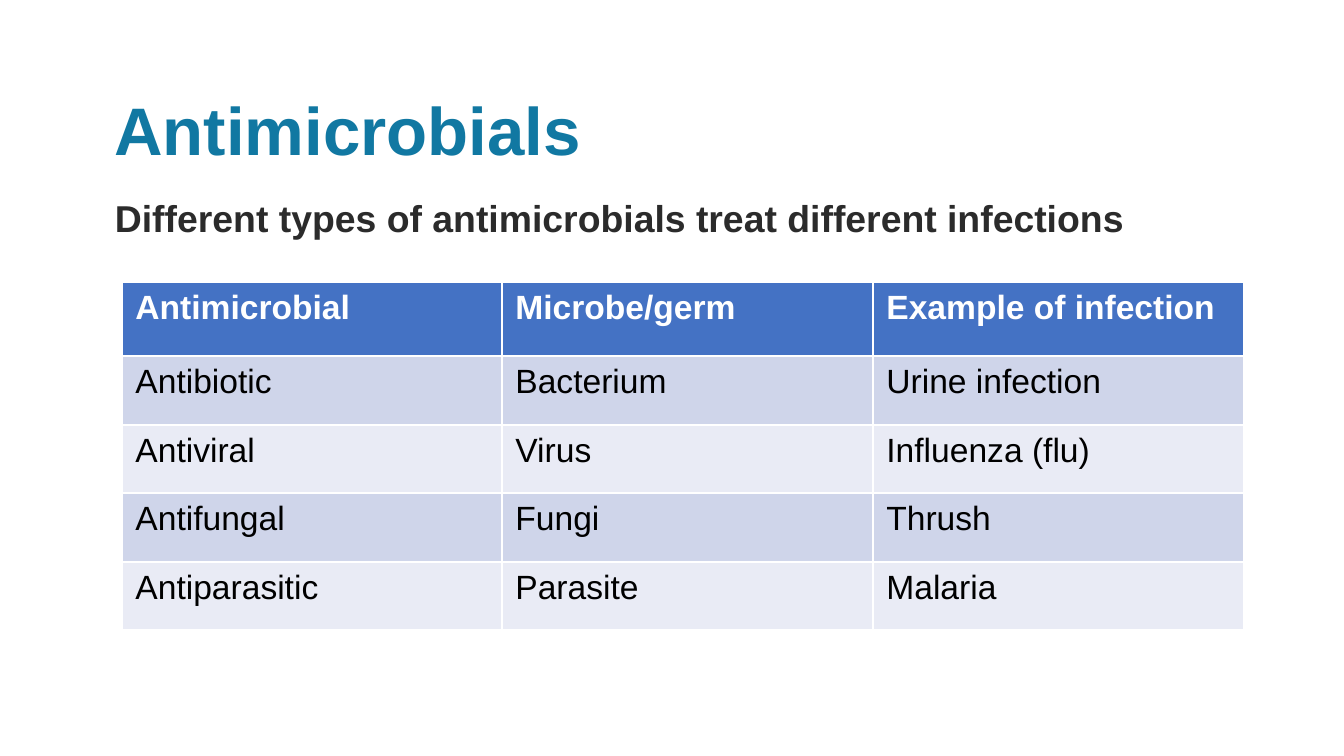
"""Build a slide that matches types of antimicrobials with microbes and infections."""
import pptx
import pptx.dml.color
import pptx.enum.text
import pptx.util

RGBColor = pptx.dml.color.RGBColor
TEAL = RGBColor(0x11, 0x78, 0xA2)
CHARCOAL = RGBColor(0x2B, 0x2B, 0x2B)
WHITE = RGBColor(0xFF, 0xFF, 0xFF)
BLACK = RGBColor(0x00, 0x00, 0x00)
BLUE = RGBColor(0x44, 0x72, 0xC4)
BAND_DARK = RGBColor(0xCF, 0xD5, 0xEA)
BAND_LIGHT = RGBColor(0xE9, 0xEB, 0xF5)

PX_PER_INCH = 134.4


def px(length):
    return pptx.util.Emu(round(length * 914400 / PX_PER_INCH))


def format_font(font, size, bold, color):
    values = {"name": "Arial", "size": pptx.util.Pt(size), "bold": bold}
    for attribute, value in values.items():
        setattr(font, attribute, value)
    font.color.rgb = color


deck = pptx.Presentation()
deck.slide_width = px(1344)
deck.slide_height = px(756)
slide = deck.slides.add_slide(deck.slide_layouts[0])
heading, subheading = slide.placeholders

align = pptx.enum.text.PP_ALIGN
texts = [
    (heading, "Antimicrobials", (101, 82, 672, 95), align.LEFT, 36, TEAL),
    (subheading, "Different types of antimicrobials treat different infections",
     (-7, 188, 1254, 59), align.CENTER, 20, CHARCOAL),
]
for holder, wording, box, alignment, size, color in texts:
    for side, length in zip(("left", "top", "width", "height"), box):
        setattr(holder, side, px(length))
    frame = holder.text_frame
    frame.text = wording
    frame.word_wrap = True
    frame.auto_size = pptx.enum.text.MSO_AUTO_SIZE.NONE
    frame.vertical_anchor = pptx.enum.text.MSO_ANCHOR.TOP
    paragraph = frame.paragraphs[0]
    paragraph.alignment = alignment
    paragraph.space_before = pptx.util.Pt(0)
    format_font(paragraph.runs[0].font, size, True, color)

treatments = [
    ("Antimicrobial", "Microbe/germ", "Example of infection"),
    ("Antibiotic", "Bacterium", "Urine infection"),
    ("Antiviral", "Virus", "Influenza (flu)"),
    ("Antifungal", "Fungi", "Thrush"),
    ("Antiparasitic", "Parasite", "Malaria"),
]
column_widths = (380, 371, 371)
row_heights = (74, 69, 68, 69, 68)
treatment_table = slide.shapes.add_table(
    len(row_heights), len(column_widths), px(122), px(282),
    px(sum(column_widths)), px(sum(row_heights))).table
for column, width in zip(treatment_table.columns, column_widths):
    column.width = px(width)
for row, height in zip(treatment_table.rows, row_heights):
    row.height = px(height)

for row_index, entries in enumerate(treatments):
    is_header = row_index == 0
    band = BLUE if is_header else (BAND_LIGHT, BAND_DARK)[row_index % 2]
    for column_index, entry in enumerate(entries):
        cell = treatment_table.cell(row_index, column_index)
        cell.text = entry
        cell.fill.solid()
        cell.fill.fore_color.rgb = band
        format_font(cell.text_frame.paragraphs[0].runs[0].font, 18,
                    is_header, WHITE if is_header else BLACK)

deck.save("out.pptx")
